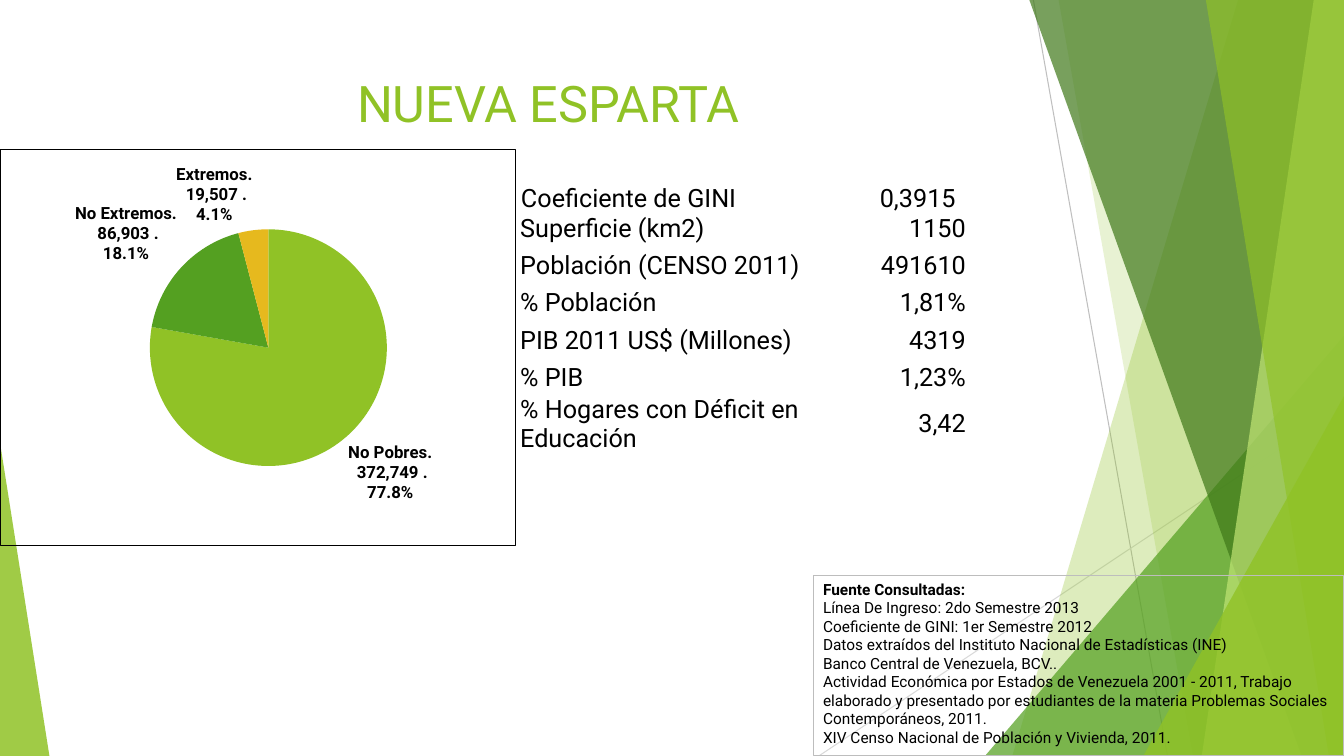
from lxml.etree import SubElement
from pptx import Presentation
from pptx.chart.data import CategoryChartData
from pptx.dml.color import RGBColor
from pptx.enum.chart import XL_CHART_TYPE as ChartType, XL_LABEL_POSITION as LabelPosition
from pptx.enum.shapes import MSO_CONNECTOR as Connector, MSO_SHAPE as Shape
from pptx.enum.text import MSO_ANCHOR as Anchor, PP_ALIGN as Align
from pptx.oxml import parse_xml
from pptx.oxml.ns import nsdecls, qn
from pptx.util import Inches, Pt

FONT = "Roboto"
LIME = RGBColor(0x90, 0xC2, 0x26)
GREEN = RGBColor(0x54, 0xA0, 0x21)
FOREST = RGBColor(0x3F, 0x78, 0x19)
PALE_LIME = RGBColor(0xC0, 0xE4, 0x74)
GOLD = RGBColor(0xE6, 0xB9, 0x1E)
GRAY = RGBColor(0xBF, 0xBF, 0xBF)
LIGHT_GRAY = RGBColor(0xD9, 0xD9, 0xD9)
BORDER_GRAY = RGBColor(0xBD, 0xBD, 0xBD)
BLACK = RGBColor(0, 0, 0)

TITLE = "NUEVA ESPARTA"
GINI = "Coeficiente de GINI\t0,3915"
POVERTY = [
    ("No Pobres", 372749, LIME),
    ("No Extremos", 86903, GREEN),
    ("Extremos", 19507, GOLD),
]
INDICATORS = [
    ("Superficie (km2)", "1150"),
    ("Población (CENSO 2011)", "491610"),
    ("% Población", "1,81%"),
    ("PIB 2011 US$ (Millones)", "4319"),
    ("% PIB", "1,23%"),
    ("% Hogares con Déficit en Educación", "3,42"),
]
SOURCES = [
    "Fuente Consultadas:",
    "Línea De Ingreso: 2do Semestre 2013",
    "Coeficiente de GINI: 1er Semestre 2012",
    "Datos extraídos del Instituto Nacional de Estadísticas (INE)",
    "Banco Central de Venezuela, BCV..",
    "Actividad Económica por Estados de Venezuela 2001 - 2011, Trabajo elaborado "
    "y presentado por estudiantes de la materia Problemas Sociales Contemporáneos, 2011.",
    "XIV Censo Nacional de Población y Vivienda, 2011.",
]

THIN_LINES = [
    ((76.89, 0), (86.87, 100), GRAY),
    ((100, 53.73), (60.92, 100), LIGHT_GRAY),
]
FACETS = [
    ("ribbon", 92.12, 75.32, LIME, 30),
    ("ribbon", 78.77, 88.75, LIME, 20),
    ("right corner", 73.29, 44.4, GREEN, 72),
    ("ribbon", 76.59, 96.85, FOREST, 70),
    ("ribbon", 97.75, 89.42, PALE_LIME, 70),
    ("ribbon", 89.72, 98.87, LIME, 65),
    ("right corner", 85.07, 52.4, LIME, 80),
    ("left corner", 3.68, 58.53, LIME, 85),
]
TITLE_AREA = (5.55, 8.93, 70.52, 19.2)
GINI_AREA = (38.03, 23.47, 39.08, 5.33)
CHART_AREA = (0, 19.73, 38.41, 52.53)
TABLE_AREA = (38.63, 28.13, 33.31, 26)
SOURCE_AREA = (60.5, 76.07, 39.5, 23.87)
GINI_TAB = 26.7
TABLE_COLUMNS = (21.16, 12.15)
TABLE_ROWS = (2.93, 5.73)
PIE_LAYOUT = {"x": 0.29, "y": 0.2, "w": 0.46, "h": 0.6}

deck = Presentation()
deck.slide_width, deck.slide_height = Inches(13.33), Inches(7.5)
page = deck.slides.add_slide(deck.slide_layouts[6])


def across(share):
    return round(deck.slide_width * share / 100)


def down(share):
    return round(deck.slide_height * share / 100)


def place(area):
    left, top, width, height = area
    return across(left), down(top), across(width), down(height)


def style(para, size, color=BLACK, bold=False, align=Align.LEFT):
    para.alignment = align
    for span in para.runs:
        span.font.name, span.font.size, span.font.bold = FONT, Pt(size), bold
        span.font.color.rgb = color


def add_text(area, text, size, color=BLACK, align=Align.LEFT):
    box = page.shapes.add_textbox(*place(area))
    box.text_frame.word_wrap = True
    para = box.text_frame.paragraphs[0]
    para.text = text
    style(para, size, color, align=align)
    return para


def add_facet(kind, first, second, color, opacity):
    if kind == "ribbon":
        builder = page.shapes.build_freeform(across(first), 0)
        builder.add_line_segments([
            (across(100), 0), (across(100), down(100)), (across(second), down(100))])
        facet = builder.convert_to_shape()
    else:
        on_right = kind == "right corner"
        left, width = (first, 100 - first) if on_right else (0, first)
        facet = page.shapes.add_shape(
            Shape.ISOSCELES_TRIANGLE, *place((left, second, width, 100 - second)))
        facet.adjustments[0] = 1 if on_right else 0
    facet.shadow.inherit = False
    facet.line.fill.background()
    facet.fill.solid()
    facet.fill.fore_color.rgb = color
    tint = facet.fill._xPr.find(".//" + qn("a:srgbClr"))
    SubElement(tint, qn("a:alpha")).set("val", str(opacity * 1000))


def add_pie():
    data = CategoryChartData(number_format="_(#,##0_)")
    data.categories = [name for name, _, _ in POVERTY]
    data.add_series("Series 1", [count for _, count, _ in POVERTY])
    chart = page.shapes.add_chart(ChartType.PIE, *place(CHART_AREA), data).chart
    chart.has_title = chart.has_legend = False
    chart.font.name, chart.font.size = FONT, Pt(10)
    chart.font.color.rgb = BLACK
    plot = chart.plots[0]
    plot.vary_by_categories = True
    for index, (_, _, color) in enumerate(POVERTY):
        fill = plot.series[0].points[index].format.fill
        fill.solid()
        fill.fore_color.rgb = color
    labels = plot.series[0].data_labels
    labels.show_value = labels.show_percentage = labels.show_category_name = True
    labels.number_format, labels.number_format_is_linked = "0.0%", False
    labels.position = LabelPosition.OUTSIDE_END
    labels.font.name, labels.font.size, labels.font.bold = FONT, Pt(12), True
    labels.font.color.rgb = BLACK
    separator = parse_xml(f'<c:separator {nsdecls("c")}>.\n</c:separator>')
    labels._element.find(qn("c:showBubbleSize")).addnext(separator)

    root = chart._chartSpace
    area = root.find(".//" + qn("c:plotArea"))
    for old in area.findall(qn("c:layout")):
        area.remove(old)
    sizes = "".join(f'<c:{key} val="{share}"/>' for key, share in PIE_LAYOUT.items())
    area.insert(0, parse_xml(
        f'<c:layout {nsdecls("c")}><c:manualLayout><c:layoutTarget val="inner"/>'
        f'<c:xMode val="edge"/><c:yMode val="edge"/>{sizes}</c:manualLayout></c:layout>'))
    root.find(qn("c:chart")).addnext(parse_xml(
        f'<c:spPr {nsdecls("c", "a")}><a:noFill/><a:ln w="{Pt(0.75)}"><a:solidFill>'
        f'<a:srgbClr val="{BLACK}"/></a:solidFill></a:ln></c:spPr>'))


def add_indicators():
    table = page.shapes.add_table(
        len(INDICATORS), len(TABLE_COLUMNS), *place(TABLE_AREA)).table
    table.first_row = table.horz_banding = False
    for column, share in zip(table.columns, TABLE_COLUMNS):
        column.width = across(share)
    for index, texts in enumerate(INDICATORS):
        table.rows[index].height = down(TABLE_ROWS[index % 2])
        for position, (text, align) in enumerate(zip(texts, (Align.LEFT, Align.RIGHT))):
            cell = table.cell(index, position)
            cell.fill.background()
            cell.vertical_anchor = Anchor.MIDDLE
            cell.margin_left = cell.margin_right = cell.margin_top = Inches(0.01)
            cell.margin_bottom = 0
            cell.text_frame.text = text
            style(cell.text_frame.paragraphs[0], 18, align=align)


def add_sources():
    box = page.shapes.add_shape(Shape.RECTANGLE, *place(SOURCE_AREA))
    box.shadow.inherit = False
    box.fill.background()
    box.line.color.rgb, box.line.width = BORDER_GRAY, Pt(0.75)
    box.text_frame.word_wrap = True
    box.text_frame.vertical_anchor = Anchor.TOP
    box.text_frame.text = "\n".join(SOURCES)
    for index, para in enumerate(box.text_frame.paragraphs):
        style(para, 11, bold=index == 0)


for start, end, color in THIN_LINES:
    line = page.shapes.add_connector(
        Connector.STRAIGHT, across(start[0]), down(start[1]), across(end[0]), down(end[1]))
    line.line.color.rgb, line.line.width = color, Pt(0.75)
    SubElement(line._element.spPr, qn("a:effectLst"))
for facet_row in FACETS:
    add_facet(*facet_row)

add_text(TITLE_AREA, TITLE, 36, LIME, Align.CENTER)
gini = add_text(GINI_AREA, GINI, 18)
stops = SubElement(gini._p.get_or_add_pPr(), qn("a:tabLst"))
SubElement(stops, qn("a:tab"), pos=str(across(GINI_TAB)), algn="l")
add_pie()
add_indicators()
add_sources()
deck.save("out.pptx")
